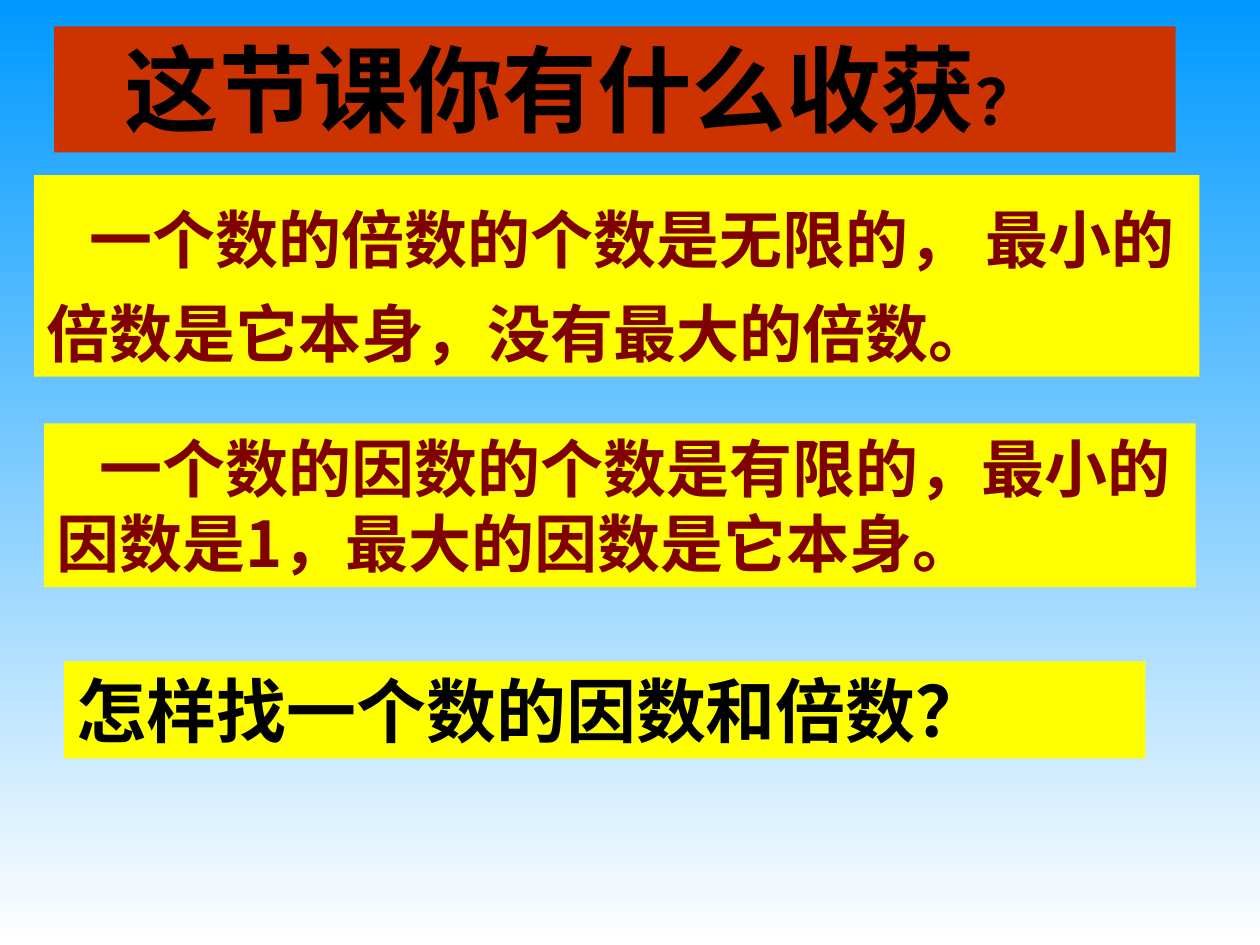
import pptx
import pptx.util
import pptx.dml.color
import pptx.enum.shapes
import pptx.enum.text
import pptx.oxml
import pptx.oxml.ns

Inches = pptx.util.Inches
Pt = pptx.util.Pt

FONT = "Noto Sans CJK SC"
COLORS = {
    "sky": "0099FF", "white": "FFFFFF", "red": "CC3300",
    "yellow": "FFFF00", "maroon": "800000", "black": "000000",
}

TITLE = {
    "at": (0.43, 0.21, 8.9, 1), "fill": "red", "color": "black",
    "indent": 0.46, "line": 64,
    "spans": [("这节课你有什么收获", 54), ("？", 36)],
}
NOTES = [
    {
        "at": (0.27, 1.39, 9.25, 1.6), "fill": "yellow", "color": "maroon",
        "indent": 0.34, "line": 54,
        "spans": [("一个数的倍数的个数是无限的， 最小的倍数是它本身，没有最大的倍数。", 36)],
    },
    {
        "at": (0.35, 3.36, 9.14, 1.3), "fill": "yellow", "color": "maroon",
        "indent": 0.34, "line": 43,
        "spans": [("一个数的因数的个数是有限的，最小的因数是1，最大的因数是它本身。", 36)],
    },
    {
        "at": (0.51, 5.25, 8.58, 0.77), "fill": "yellow", "color": "black",
        "indent": 0, "line": 48,
        "spans": [("怎样找一个数的因数和倍数？", 40)],
    },
]


def rgb(name):
    return pptx.dml.color.RGBColor.from_string(COLORS[name])


def write_box(box, content):
    box.left, box.top, box.width, box.height = map(Inches, content["at"])
    box.fill.solid()
    box.fill.fore_color.rgb = rgb(content["fill"])
    box.line.fill.background()
    frame = box.text_frame
    frame.word_wrap = True
    frame.auto_size = pptx.enum.text.MSO_AUTO_SIZE.NONE
    frame.vertical_anchor = pptx.enum.text.MSO_ANCHOR.TOP
    frame.margin_left = frame.margin_right = Inches(0.1)
    frame.margin_top = frame.margin_bottom = Inches(0.05)
    para = frame.paragraphs[0]
    para.alignment = pptx.enum.text.PP_ALIGN.LEFT
    para.line_spacing = Pt(content["line"])
    para.space_before = Pt(0)
    properties = para._p.get_or_add_pPr()
    properties.set("marL", "0")
    properties.set("indent", str(Inches(content["indent"])))
    for text, size in content["spans"]:
        span = para.add_run()
        span.text = text
        span.font.size = Pt(size)
        span.font.bold = True
        span.font.name = FONT
        span.font.color.rgb = rgb(content["color"])
        east_asian = pptx.oxml.parse_xml(
            f'<a:ea {pptx.oxml.ns.nsdecls("a")} typeface="{FONT}"/>')
        span.font._element.find(pptx.oxml.ns.qn("a:latin")).addnext(east_asian)


def main():
    deck = pptx.Presentation()
    deck.slide_width, deck.slide_height = Inches(10), Inches(7.5)
    page = deck.slides.add_slide(deck.slide_layouts[5])

    backdrop = page.background.fill
    backdrop.gradient()
    backdrop.gradient_angle = 270
    for stop, name, position in zip(backdrop.gradient_stops, ("sky", "white"), (0, 1)):
        stop.color.rgb = rgb(name)
        stop.position = position

    write_box(page.shapes.title, TITLE)
    for note in NOTES:
        box = page.shapes.add_shape(
            pptx.enum.shapes.MSO_SHAPE.RECTANGLE, *map(Inches, note["at"]))
        box.shadow.inherit = False
        write_box(box, note)
    deck.save("out.pptx")


if __name__ == "__main__":
    main()
